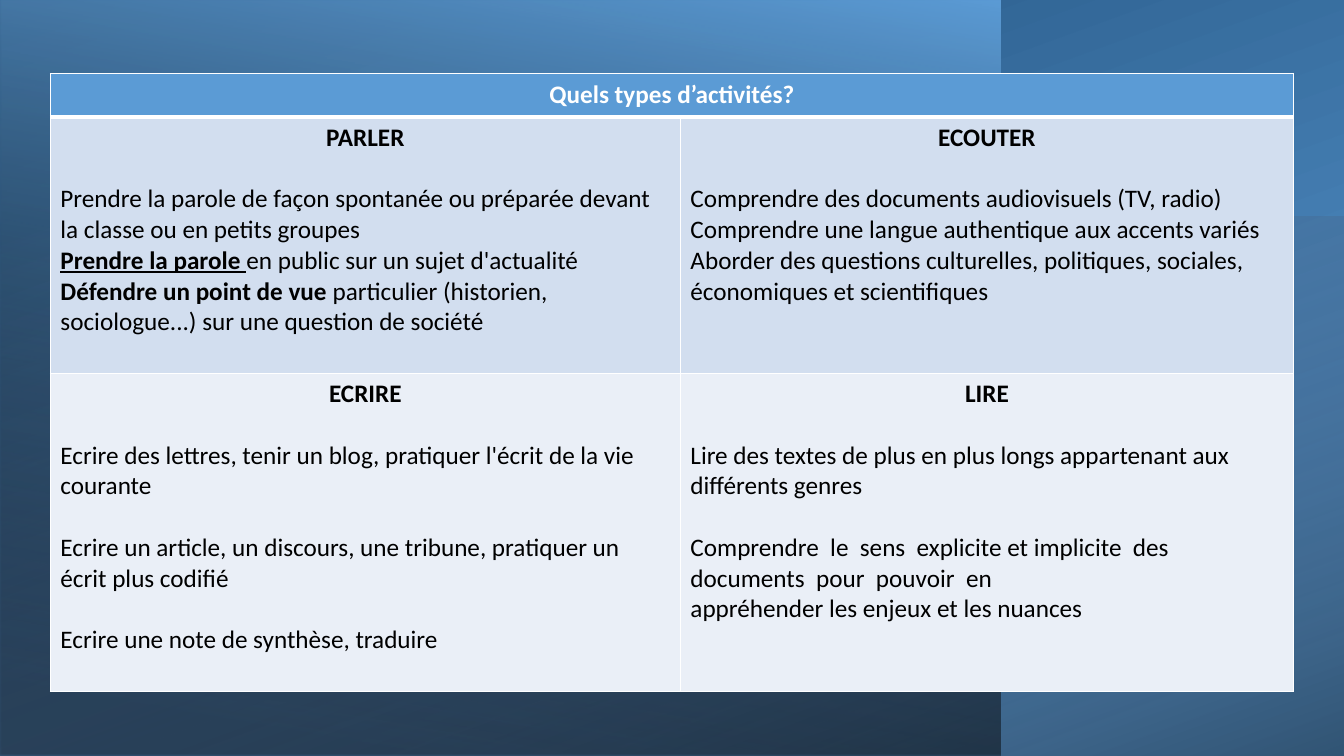
from lxml.etree import SubElement
from pptx import Presentation
from pptx.dml.color import RGBColor as RGB
from pptx.enum.shapes import MSO_SHAPE as SHAPE
from pptx.enum.text import MSO_ANCHOR as ANCHOR, PP_ALIGN as ALIGN
from pptx.oxml import parse_xml
from pptx.oxml.ns import nsdecls, qn
from pptx.util import Pt

WHITE = RGB(0xFF, 0xFF, 0xFF)
BLACK = RGB(0, 0, 0)
BLUE = RGB(0x5B, 0x9B, 0xD5)
NAVY = RGB(0x1F, 0x4E, 0x79)
PERIWINKLE = RGB(0x8F, 0xAA, 0xDC)
SKY = RGB(0xD2, 0xDE, 0xEF)
MIST = RGB(0xEA, 0xEF, 0xF7)

SLIDE_WIDTH, SLIDE_HEIGHT = 960, 540
LINE = 22
COLUMNS = (450, 438)
ROWS = (31.4, 183, 227)

PANELS = [
    ((210, -210, 540, 960), 270, 200, [(8, BLUE, 100), (100, NAVY, 100)]),
    ((0, 0, 714.3, 540), 180, 80, [(8, BLACK, 52), (100, BLUE, 100)]),
    ((287.4, -132.6, 385.2, 960), 270, 20, [(0, PERIWINKLE, 0), (100, BLACK, 46)]),
]

TITLE = "Quels types d’activités?"
SKILLS = [
    [
        ("PARLER", [
            ([("Prendre la parole de façon spontanée ou préparée devant la classe "
               "ou en petits groupes", {})], 0),
            ([("Prendre la parole ", {"bold": True, "underline": True}),
              ("en public sur un sujet d'actualité", {})], 0),
            ([("Défendre un point de vue ", {"bold": True}),
              ("particulier (historien, sociologue...) sur une question de société", {})], 0),
        ]),
        ("ECOUTER", [
            ([("Comprendre des documents audiovisuels (TV, radio)", {})], 0),
            ([("Comprendre une langue authentique aux accents variés", {})], 0),
            ([("Aborder des questions culturelles, politiques, sociales, "
               "économiques et scientifiques", {})], 0),
        ]),
    ],
    [
        ("ECRIRE", [
            ([("Ecrire des lettres, tenir un blog, pratiquer l'écrit de la vie courante", {})], LINE),
            ([("Ecrire un article, un discours, une tribune, pratiquer un écrit plus codifié", {})], LINE),
            ([("Ecrire une note de synthèse, traduire", {})], 0),
        ]),
        ("LIRE", [
            ([("Lire des textes de plus en plus longs appartenant aux différents genres", {})], LINE),
            ([("Comprendre  le  sens  explicite et implicite  des  documents  pour  pouvoir  en ", {})], 0),
            ([("appréhender les enjeux et les nuances", {})], 0),
        ]),
    ],
]


def add_panel(slide, box, rotation, angle, stops):
    """Place one mirrored gradient rectangle in the box."""
    panel = slide.shapes.add_shape(SHAPE.RECTANGLE, *map(Pt, box))
    panel.rotation = rotation
    panel.shadow.inherit = False
    panel.line.fill.background()
    properties = panel._element.spPr
    properties.find(qn("a:xfrm")).set("flipH", "1")
    gradient = parse_xml(f'<a:gradFill {nsdecls("a")} rotWithShape="1"/>')
    stop_list = SubElement(gradient, qn("a:gsLst"))
    for position, color, opacity in stops:
        stop = SubElement(stop_list, qn("a:gs"), pos=str(position * 1000))
        tint = SubElement(stop, qn("a:srgbClr"), val=str(color))
        if opacity < 100:
            SubElement(tint, qn("a:alpha"), val=str(opacity * 1000))
    SubElement(gradient, qn("a:lin"), ang=str(angle * 60000), scaled="0")
    properties.find(qn("a:prstGeom")).addnext(gradient)


def write_paragraph(paragraph, runs, color=BLACK, align=ALIGN.LEFT, gap=0):
    """Fill a paragraph with formatted runs and the gap that follows it."""
    paragraph.alignment = align
    paragraph.space_after = Pt(gap)
    for wording, emphasis in runs:
        run = paragraph.add_run()
        run.text = wording
        run.font.color.rgb = color
        look = {"name": "Calibri", "size": Pt(18), "bold": False, **emphasis}
        for attribute, value in look.items():
            setattr(run.font, attribute, value)


def style_cell(cell, color, top=1, bottom=1):
    """Set the fill, margins and white borders of a cell."""
    cell.fill.solid()
    cell.fill.fore_color.rgb = color
    margins = {"margin_left": 7.2, "margin_right": 7.2, "margin_top": 3.6, "margin_bottom": 3.6}
    for attribute, value in margins.items():
        setattr(cell, attribute, Pt(value))
    borders = {"lnL": 1, "lnR": 1, "lnT": top, "lnB": bottom}
    for index, (edge, width) in enumerate(borders.items()):
        cell._tc.get_or_add_tcPr().insert(index, parse_xml(
            f'<a:{edge} {nsdecls("a")} w="{Pt(width)}"><a:solidFill>'
            f'<a:srgbClr val="{WHITE}"/></a:solidFill></a:{edge}>'))


def write_skill(cell, heading, activities):
    """Write a centred heading and the activities below it."""
    frame = cell.text_frame
    write_paragraph(frame.paragraphs[0], [(heading, {"bold": True})], align=ALIGN.CENTER, gap=LINE)
    for runs, gap in activities:
        write_paragraph(frame.add_paragraph(), runs, gap=gap)


def add_activities(slide, left, top):
    """Place the table of activities with its corner at left, top."""
    size = map(Pt, (left, top, sum(COLUMNS), sum(ROWS)))
    table = slide.shapes.add_table(len(ROWS), len(COLUMNS), *size).table
    for column, width in zip(table.columns, COLUMNS):
        column.width = Pt(width)
    for row, height in zip(table.rows, ROWS):
        row.height = Pt(height)
    for header in table.rows[0].cells:
        style_cell(header, BLUE, bottom=3)
    title = table.cell(0, 0)
    title.merge(table.cell(0, 1))
    title.vertical_anchor = ANCHOR.MIDDLE
    write_paragraph(title.text_frame.paragraphs[0], [(TITLE, {"bold": True})], WHITE, ALIGN.CENTER)
    for row, (skills, color, border) in enumerate(zip(SKILLS, (SKY, MIST), (3, 1)), 1):
        for column, (heading, activities) in enumerate(skills):
            cell = table.cell(row, column)
            style_cell(cell, color, top=border)
            write_skill(cell, heading, activities)


def main():
    """Build and save the slide."""
    deck = Presentation()
    deck.slide_width, deck.slide_height = Pt(SLIDE_WIDTH), Pt(SLIDE_HEIGHT)
    slide = deck.slides.add_slide(deck.slide_layouts[6])
    for panel in PANELS:
        add_panel(slide, *panel)
    add_activities(slide, 36, 52.4)
    deck.save("out.pptx")


if __name__ == "__main__":
    main()
